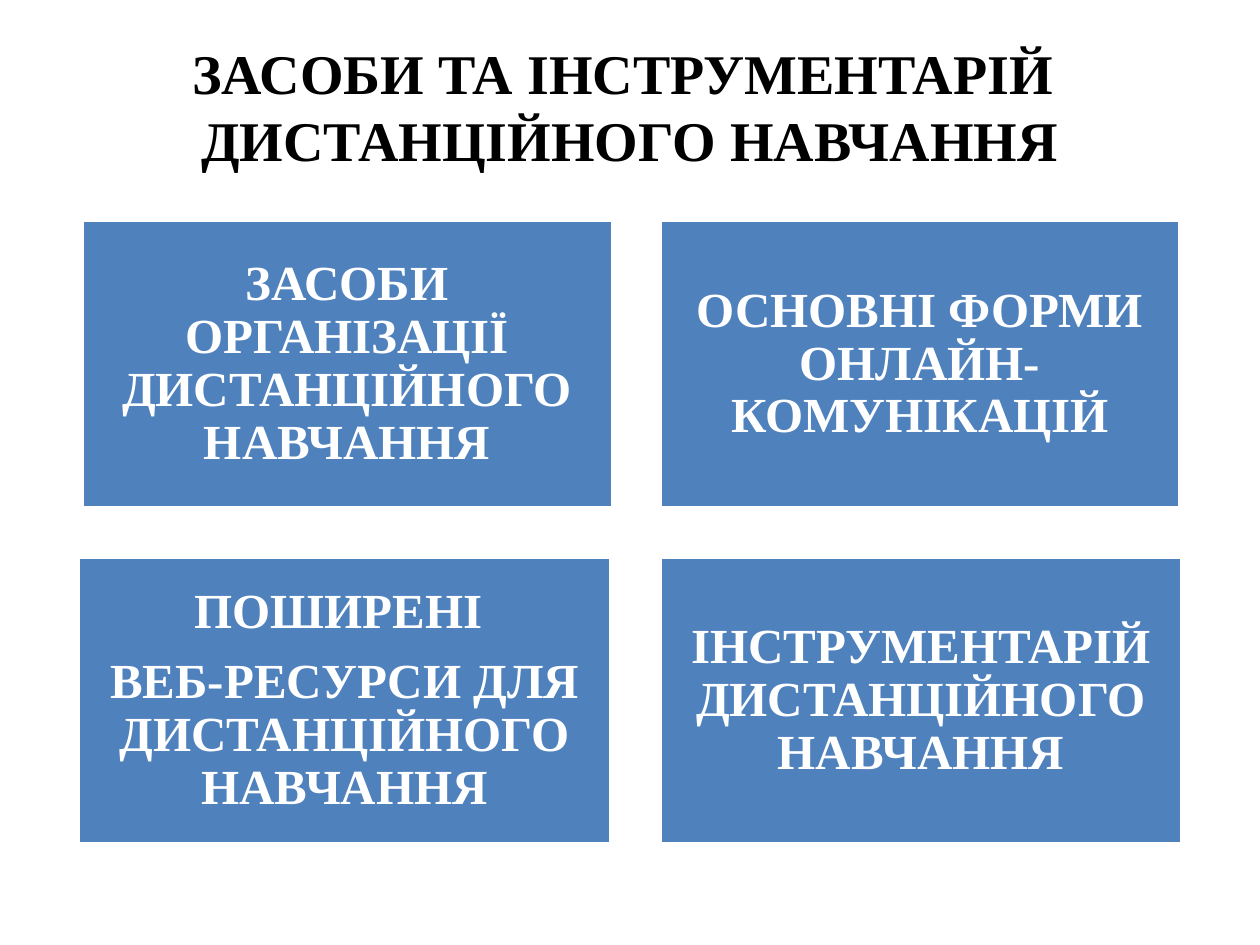
from pptx import Presentation
from pptx.dml.color import RGBColor
from pptx.enum.shapes import MSO_SHAPE
from pptx.enum.text import MSO_ANCHOR, MSO_AUTO_SIZE, PP_ALIGN
from pptx.util import Inches, Pt

COLORS = {"title": "000000", "card": "4F81BD", "white": "FFFFFF"}
FONT = "Times New Roman"


def write_text(text_frame, paragraphs, size, color, margins=(0.1, 0.05),
               line_spacing=None, space_after=None):
    """Fill a frame with bold centred paragraphs; a vertical tab breaks a line."""
    text_frame.word_wrap = True
    text_frame.auto_size = MSO_AUTO_SIZE.NONE
    text_frame.vertical_anchor = MSO_ANCHOR.MIDDLE
    text_frame.margin_left = text_frame.margin_right = Inches(margins[0])
    text_frame.margin_top = text_frame.margin_bottom = Inches(margins[1])
    for index, text in enumerate(paragraphs):
        paragraph = text_frame.paragraphs[0] if index == 0 else text_frame.add_paragraph()
        paragraph.text = text
        paragraph.alignment = PP_ALIGN.CENTER
        paragraph.line_spacing = line_spacing
        paragraph.space_after = space_after
        for run in paragraph.runs:
            run.font.name = FONT
            run.font.size = Pt(size)
            run.font.bold = True
            run.font.color.rgb = RGBColor.from_string(COLORS[color])


class SlideBuilder:
    """Holds the card style and the current slide."""

    card_height = 2.28
    card_margins = (0.12, 0.12)
    card_size = 28
    title_size = 32

    def __init__(self, slide):
        self.slide = slide

    def title(self, text, left, top, width, height):
        shape = self.slide.shapes.title
        shape.left, shape.top = Inches(left), Inches(top)
        shape.width, shape.height = Inches(width), Inches(height)
        write_text(shape.text_frame, [text], self.title_size, "title")

    def card(self, paragraphs, left, top, width):
        shape = self.slide.shapes.add_shape(
            MSO_SHAPE.RECTANGLE, Inches(left), Inches(top),
            Inches(width), Inches(self.card_height))
        shape.shadow.inherit = False
        shape.fill.solid()
        shape.fill.fore_color.rgb = RGBColor.from_string(COLORS["card"])
        shape.line.color.rgb = RGBColor.from_string(COLORS["white"])
        shape.line.width = Pt(2)
        write_text(shape.text_frame, paragraphs, self.card_size, "white",
                   margins=self.card_margins, line_spacing=0.9,
                   space_after=Pt(self.card_size * 0.35))


def main():
    presentation = Presentation()
    presentation.slide_width, presentation.slide_height = Inches(10), Inches(7.5)
    builder = SlideBuilder(presentation.slides.add_slide(presentation.slide_layouts[5]))

    # Title
    builder.title("ЗАСОБИ ТА ІНСТРУМЕНТАРІЙ \vДИСТАНЦІЙНОГО НАВЧАННЯ", 0.5, 0.3, 9, 1.07)

    # Two rows of cards: text, left, width
    rows = [
        [(["ЗАСОБИ ОРГАНІЗАЦІЇ ДИСТАНЦІЙНОГО НАВЧАННЯ"], 0.65, 4.21),
         (["ОСНОВНІ ФОРМИ ОНЛАЙН-КОМУНІКАЦІЙ"], 5.24, 4.12)],
        [(["ПОШИРЕНІ ", "ВЕБ-РЕСУРСИ ДЛЯ ДИСТАНЦІЙНОГО НАВЧАННЯ"], 0.62, 4.23),
         (["ІНСТРУМЕНТАРІЙ ДИСТАНЦІЙНОГО НАВЧАННЯ"], 5.24, 4.14)],
    ]
    first_top, row_gap = 1.75, 0.39
    for row_index, row in enumerate(rows):
        top = first_top + row_index * (builder.card_height + row_gap)
        for paragraphs, left, width in row:
            builder.card(paragraphs, left, top, width)

    presentation.save("out.pptx")


if __name__ == "__main__":
    main()
